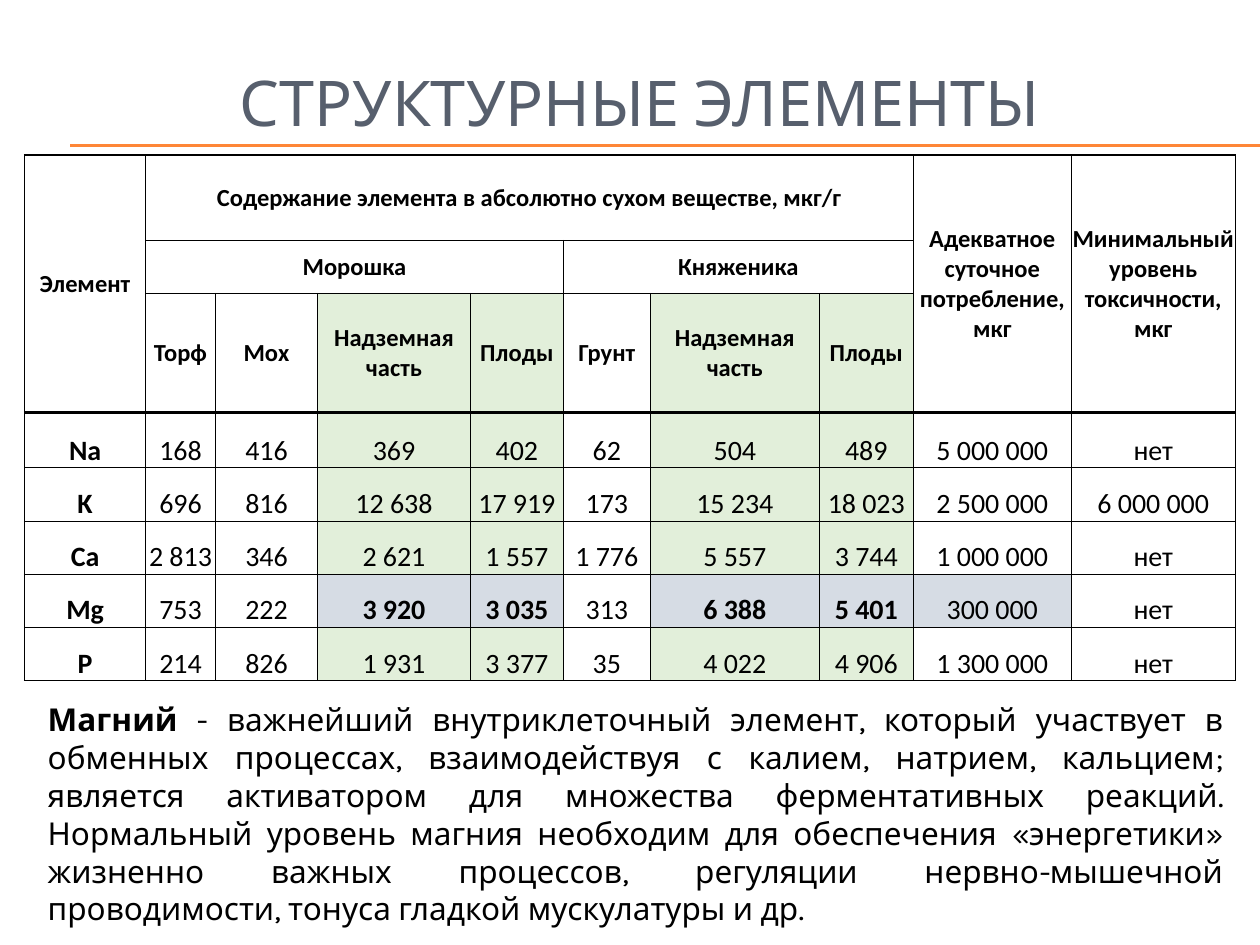
from lxml import etree
from pptx import Presentation
from pptx.dml.color import RGBColor
from pptx.enum.shapes import MSO_CONNECTOR
from pptx.enum.text import MSO_ANCHOR, PP_ALIGN
from pptx.oxml.ns import qn
from pptx.util import Pt

LINE = MSO_CONNECTOR.STRAIGHT
MIDDLE, BOTTOM = MSO_ANCHOR.MIDDLE, MSO_ANCHOR.BOTTOM
CENTER, JUSTIFY = PP_ALIGN.CENTER, PP_ALIGN.JUSTIFY

COLORS = {"ink": "000000", "title": "575F6D", "rule": "FE8637",
          "green": "E2EFDA", "blue": "D6DCE4"}
TEXT, GRID = "Karla", "Calibri"  # fonts
THIN, RIM, HEAVY = 0.5, 1, 2  # cell edge widths

COLS = [69.1, 40, 58.3, 87.4, 53.1, 49.7, 96.6, 53.7, 90.3, 93.7]
ROWS = [48.7, 30.24, 61.9, 31.9] + [30.4] * 4

# (row, column, rows spanned, columns spanned, text)
SPANS = [
    (0, 0, 3, 1, "Элемент"),
    (0, 1, 1, 7, "Содержание элемента в абсолютно сухом веществе, мкг/г"),
    (0, 8, 3, 1, "Адекватное суточное потребление, мкг"),
    (0, 9, 3, 1, "Минимальный уровень токсичности, мкг"),
    (1, 1, 1, 4, "Морошка"),
    (1, 5, 1, 3, "Княженика"),
]
PARTS = ["Торф", "Мох", "Надземная часть", "Плоды",
         "Грунт", "Надземная часть", "Плоды"]
DATA = [
    ["Na", "168", "416", "369", "402", "62", "504", "489", "5 000 000", "нет"],
    ["K", "696", "816", "12 638", "17 919", "173", "15 234", "18 023",
     "2 500 000", "6 000 000"],
    ["Ca", "2 813", "346", "2 621", "1 557", "1 776", "5 557", "3 744",
     "1 000 000", "нет"],
    ["Mg", "753", "222", "3 920", "3 035", "313", "6 388", "5 401",
     "300 000", "нет"],
    ["P", "214", "826", "1 931", "3 377", "35", "4 022", "4 906",
     "1 300 000", "нет"],
]
PART_ROW, DATA_ROW = 2, 3
MG_ROW = DATA_ROW + [line[0] for line in DATA].index("Mg")
PLANT = {3, 4, 6, 7}  # columns for plant parts
DAILY = 8  # column for daily intake

LEAD = "Магний"
BODY = (" - важнейший внутриклеточный элемент, который участвует в обменных "
        "процессах, взаимодействуя с калием, натрием, кальцием; является "
        "активатором для множества ферментативных реакций. Нормальный уровень "
        "магния необходим для обеспечения «энергетики» жизненно важных "
        "процессов, регуляции нервно-мышечной проводимости, тонуса гладкой "
        "мускулатуры и др.")


def rgb(name):
    return RGBColor.from_string(COLORS[name])


def style(para, face, size, color="ink", bold=None, align=CENTER):
    para.alignment = align
    font = para.font
    font.name, font.size, font.bold = face, Pt(size), bold
    font.color.rgb = rgb(color)


def add_box(slide, box):
    frame = slide.shapes.add_textbox(*map(Pt, box)).text_frame
    frame.word_wrap = True
    return frame


def add_title(slide, box):
    frame = add_box(slide, box)
    frame.vertical_anchor = MIDDLE
    para = frame.paragraphs[0]
    para.text = "СТРУКТУРНЫЕ ЭЛЕМЕНТЫ"
    style(para, TEXT, 36, "title")


def add_rule(slide, left, top, right):
    rule = slide.shapes.add_connector(LINE, Pt(left), Pt(top), Pt(right), Pt(top))
    rule.line.color.rgb = rgb("rule")
    rule.line.width = Pt(0.75)
    etree.SubElement(rule._element.spPr, qn("a:effectLst"))


def set_edges(cell, row, col, high, wide):
    """Draw thin edges, heavier at the table's rim and under the heads."""
    edges = {
        "a:lnL": RIM if col == 0 else THIN,
        "a:lnR": RIM if col + wide == len(COLS) else THIN,
        "a:lnT": {0: RIM, DATA_ROW: HEAVY}.get(row, THIN),
        "a:lnB": HEAVY if row + high == DATA_ROW else THIN,
    }
    props = cell._tc.get_or_add_tcPr()
    for tag, width in edges.items():
        edge = etree.SubElement(props, qn(tag), w=str(Pt(width)))
        fill = etree.SubElement(edge, qn("a:solidFill"))
        etree.SubElement(fill, qn("a:srgbClr"), val=COLORS["ink"])


def pick_tint(row, col):
    """Plant parts are green; the magnesium row stands out in blue."""
    if row == MG_ROW and col in PLANT | {DAILY}:
        return "blue"
    return "green" if row >= PART_ROW and col in PLANT else None


def fill_cell(table, row, col, high, wide, text):
    cell = table.cell(row, col)
    if high * wide > 1:
        cell.merge(table.cell(row + high - 1, col + wide - 1))
    head = row < DATA_ROW
    cell.text = text
    cell.vertical_anchor = MIDDLE if head else BOTTOM
    cell.margin_left = cell.margin_right = cell.margin_top = Pt(0.7)
    cell.margin_bottom = 0
    bold = head or col == 0 or (row == MG_ROW and col in PLANT)
    style(cell.text_frame.paragraphs[0], GRID, 14 if head else 16, bold=bold)
    set_edges(cell, row, col, high, wide)
    tint = pick_tint(row, col)
    if tint:
        cell.fill.solid()
        cell.fill.fore_color.rgb = rgb(tint)


def list_cells():
    """Give row, column, spans and text of every cell that holds text."""
    parts = [(PART_ROW, col, 1, 1, text) for col, text in enumerate(PARTS, 1)]
    body = [(row, col, 1, 1, text) for row, line in enumerate(DATA, DATA_ROW)
            for col, text in enumerate(line)]
    return SPANS + parts + body


def add_grid(slide, left, top):
    shape = slide.shapes.add_table(len(ROWS), len(COLS), Pt(left), Pt(top),
                                   Pt(sum(COLS)), Pt(sum(ROWS)))
    table = shape.table
    table.first_row = table.horz_banding = False
    for col, width in zip(table.columns, COLS):
        col.width = Pt(width)
    for row, height in zip(table.rows, ROWS):
        row.height = Pt(height)
    for item in list_cells():
        fill_cell(table, *item)
    for cell in table.iter_cells():
        if cell.fill.type is None:
            cell.fill.background()


def add_note(slide, box):
    para = add_box(slide, box).paragraphs[0]
    style(para, TEXT, 18, align=JUSTIFY)
    lead = para.add_run()
    lead.text, lead.font.bold = LEAD, True
    para.add_run().text = BODY


def main():
    deck = Presentation()
    deck.slide_width, deck.slide_height = Pt(720), Pt(540)
    slide = deck.slides.add_slide(deck.slide_layouts[6])
    for top in (82.8, 83.5):
        add_rule(slide, 40.3, top, 720)
    add_title(slide, (23.8, 20.9, 684, 73.4))
    add_grid(slide, 14.1, 88.6)
    add_note(slide, (20.2, 396.7, 686.2, 116.6))
    deck.save("out.pptx")


if __name__ == "__main__":
    main()
